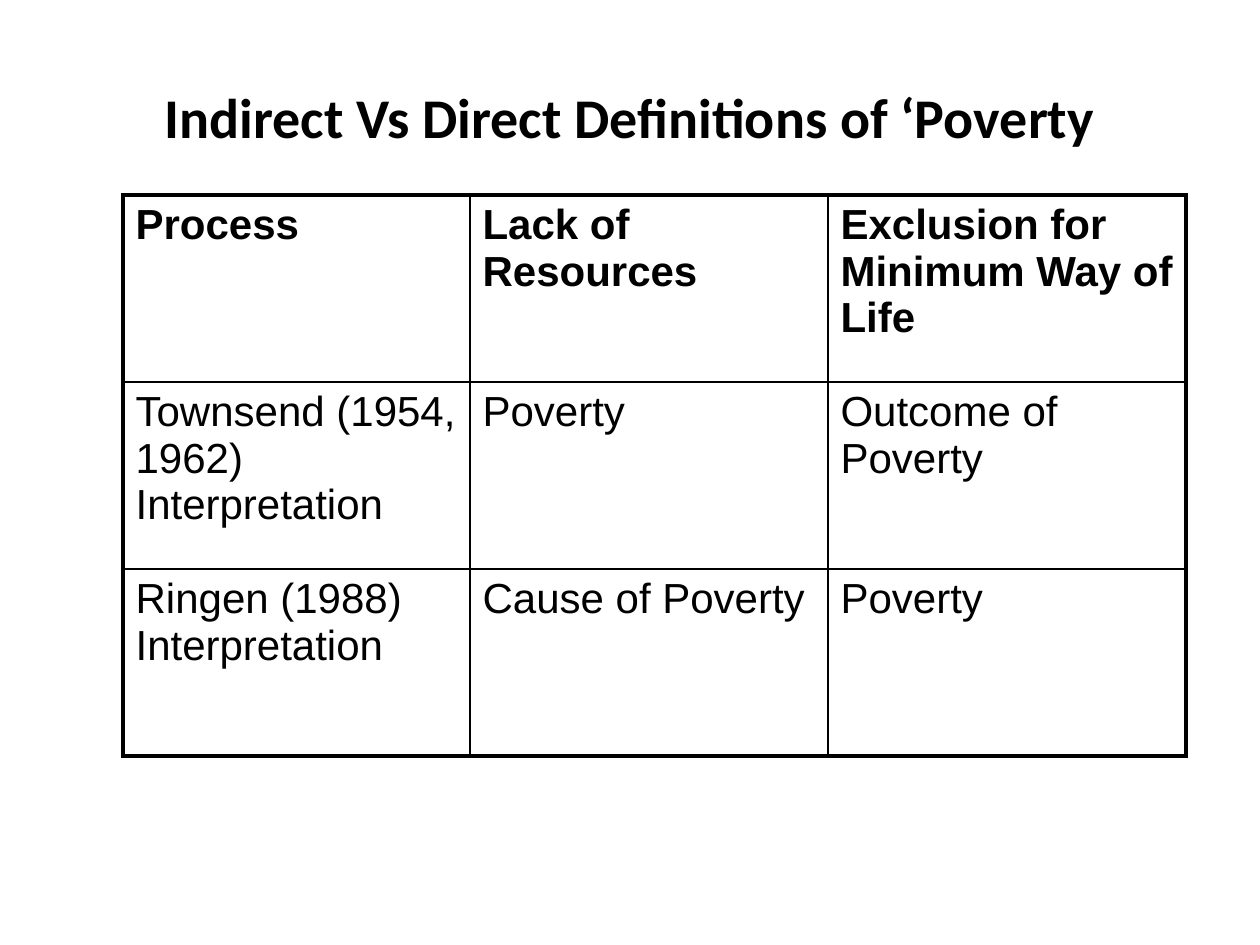
import pptx
import pptx.util
import pptx.dml.color
import pptx.enum.text
from lxml import etree

# Content
TITLE = "Indirect Vs Direct Definitions of ‘Poverty"
ROWS = [
    ["Process", "Lack of Resources", "Exclusion for Minimum Way of Life"],
    ["Townsend (1954, 1962) Interpretation", "Poverty", "Outcome of Poverty"],
    ["Ringen (1988) Interpretation", "Cause of Poverty", "Poverty"],
]

# Theme and layout, lengths in px
THEME = {
    "ink": "000000",
    "title": {"name": "Calibri", "size": pptx.util.Pt(32), "bold": True},
    "header": {"name": "Arial", "size": pptx.util.Pt(24), "bold": True},
    "body": {"name": "Arial", "size": pptx.util.Pt(24), "bold": False},
    "outer": 2.25,
    "inner": 1,
}
SLIDE = (1260, 945)
TITLE_BOX = (63, 38, 1134, 157)
TABLE_AT = (123, 195)
COLS = [347, 358, 358]
ROW_H = 187


def px(n):
    return pptx.util.Emu(round(n * 914400 / 126))


def write(tf, text, style):
    r = tf.paragraphs[0].add_run()
    r.text = text
    for name, value in THEME[style].items():
        setattr(r.font, name, value)
    r.font.color.rgb = pptx.dml.color.RGBColor.from_string(THEME["ink"])


def set_borders(cell, edges):
    """Draw each side heavy where it lies on the table's outline."""
    tc_pr = cell._tc.get_or_add_tcPr()
    ns = "{http://schemas.openxmlformats.org/drawingml/2006/main}"
    for i, (side, is_outer) in enumerate(edges.items()):
        width = pptx.util.Pt(THEME["outer" if is_outer else "inner"])
        ln = etree.Element(f"{ns}ln{side}", w=str(int(width)))
        fill = etree.SubElement(ln, f"{ns}solidFill")
        etree.SubElement(fill, f"{ns}srgbClr", val=THEME["ink"])
        tc_pr.insert(i, ln)


prs = pptx.Presentation()
prs.slide_width, prs.slide_height = map(px, SLIDE)
s = prs.slides.add_slide(prs.slide_layouts[6])

# Title
tf = s.shapes.add_textbox(*map(px, TITLE_BOX)).text_frame
tf.word_wrap = True
tf.vertical_anchor = pptx.enum.text.MSO_ANCHOR.MIDDLE
tf.paragraphs[0].alignment = pptx.enum.text.PP_ALIGN.CENTER
write(tf, TITLE, "title")

# Table
last_row, last_col = len(ROWS) - 1, len(COLS) - 1
size = (sum(COLS), ROW_H * len(ROWS))
table = s.shapes.add_table(len(ROWS), len(COLS), *map(px, TABLE_AT + size)).table
table.first_row = table.horz_banding = False
for column, width in zip(table.columns, COLS):
    column.width = px(width)
for i, row in enumerate(ROWS):
    table.rows[i].height = px(ROW_H)
    for j, text in enumerate(row):
        cell = table.cell(i, j)
        cell.fill.background()
        write(cell.text_frame, text, "body" if i else "header")
        set_borders(cell, {"L": j == 0, "R": j == last_col,
                           "T": i == 0, "B": i == last_row})

prs.save("out.pptx")
